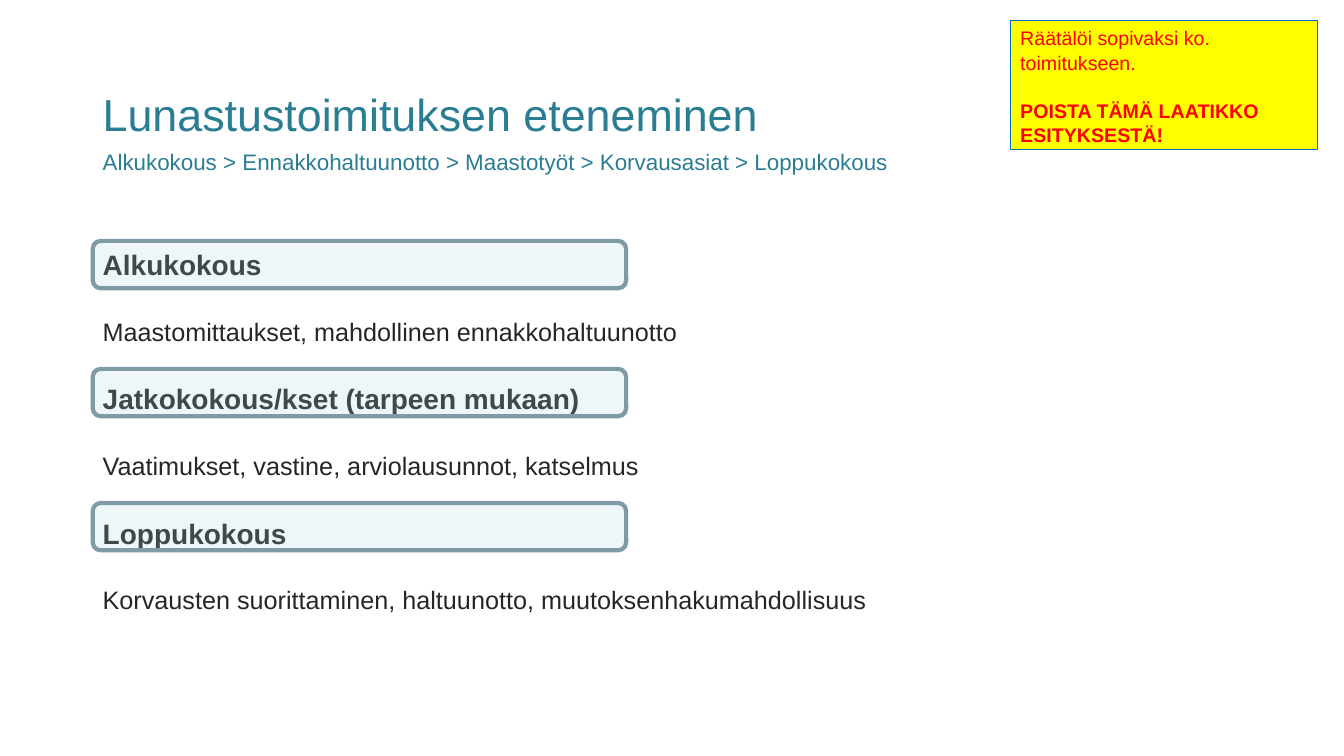
from lxml import etree
from pptx import Presentation
from pptx.dml.color import RGBColor
from pptx.enum.shapes import MSO_SHAPE
from pptx.enum.text import MSO_ANCHOR, PP_ALIGN
from pptx.oxml.ns import qn
from pptx.util import Inches, Pt

RECT, ROUNDED = MSO_SHAPE.RECTANGLE, MSO_SHAPE.ROUNDED_RECTANGLE
TOP, MIDDLE = MSO_ANCHOR.TOP, MSO_ANCHOR.MIDDLE
LEFT = PP_ALIGN.LEFT

TEAL = RGBColor(0x2B, 0x7D, 0x93)
DARK = RGBColor(0x26, 0x26, 0x26)
RED = RGBColor(0xFF, 0x00, 0x00)
YELLOW = RGBColor(0xFF, 0xFF, 0x00)
BLUE = RGBColor(0x00, 0x70, 0xC0)
PALE_BLUE = RGBColor(0xAA, 0xD2, 0xE0)
GREY_BLUE = RGBColor(0x7E, 0x9B, 0xA6)

MARGIN = 0.92
STAGES = [
    ("Alkukokous", "Maastomittaukset, mahdollinen ennakkohaltuunotto"),
    ("Jatkokokous/kset (tarpeen mukaan)",
     "Vaatimukset, vastine, arviolausunnot, katselmus"),
    ("Loppukokous",
     "Korvausten suorittaminen, haltuunotto, muutoksenhakumahdollisuus"),
]
FRAME_TOPS = [2.39, 3.66, 4.99]


def write_lines(tf, lines, color, gap=0, spacing=1.0, anchor=TOP):
    """Write (text, size, bold) lines, one paragraph each, gap points apart."""
    tf.word_wrap = True
    tf.vertical_anchor = anchor
    for i, (text, size, bold) in enumerate(lines):
        p = tf.add_paragraph() if i else tf.paragraphs[0]
        p.text = text
        p.alignment = LEFT
        p.line_spacing = spacing
        p.space_before = Pt(gap if i else 0)
        font = p.runs[0].font
        font.name = "Arial"
        font.size = Pt(size)
        font.bold = bold
        font.color.rgb = color


def add_text(s, left, top, width, height, lines, color, **layout):
    box = s.shapes.add_textbox(
        Inches(left), Inches(top), Inches(width), Inches(height))
    write_lines(box.text_frame, lines, color, **layout)


def add_box(s, kind, left, top, width, height, fill, line, line_width):
    sp = s.shapes.add_shape(
        kind, Inches(left), Inches(top), Inches(width), Inches(height))
    sp.shadow.inherit = False
    sp.fill.solid()
    sp.fill.fore_color.rgb = fill
    sp.line.color.rgb = line
    sp.line.width = Pt(line_width)
    return sp


def set_opacity(sp, percent):
    color = sp.fill._xPr.find(qn("a:solidFill"))[0]
    etree.SubElement(color, qn("a:alpha"), val=str(percent * 1000))


def add_note(s):
    note = add_box(s, RECT, 10.02, 0.2, 3.05, 1.28, YELLOW, BLUE, 0.75)
    lines = [("Räätälöi sopivaksi ko. toimitukseen.", 14, False),
             ("POISTA TÄMÄ LAATIKKO ESITYKSESTÄ!", 14, True)]
    write_lines(note.text_frame, lines, RED, gap=17, spacing=1.04)


def add_stages(s):
    lines = []
    for heading, detail in STAGES:
        lines += [(heading, 20, True), (detail, 18, False)]
    add_text(s, MARGIN, 2.39, 10.12, 5, lines, DARK, gap=24, spacing=1.05)
    for top in FRAME_TOPS:
        frame = add_box(s, ROUNDED, MARGIN, top, 5.29, 0.47,
                        PALE_BLUE, GREY_BLUE, 3)
        set_opacity(frame, 20)


def main():
    prs = Presentation()
    prs.slide_width, prs.slide_height = Inches(13.33), Inches(7.5)
    s = prs.slides.add_slide(prs.slide_layouts[6])
    add_text(s, MARGIN, 0.83, 11.5, 0.6,
             [("Lunastustoimituksen eteneminen", 32, False)],
             TEAL, anchor=MIDDLE)
    add_text(s, MARGIN, 1.42, 10.98, 0.37,
             [("Alkukokous > Ennakkohaltuunotto > Maastotyöt > "
               "Korvausasiat > Loppukokous", 16, False)], TEAL)
    add_note(s)
    add_stages(s)
    prs.save("out.pptx")


if __name__ == "__main__":
    main()
